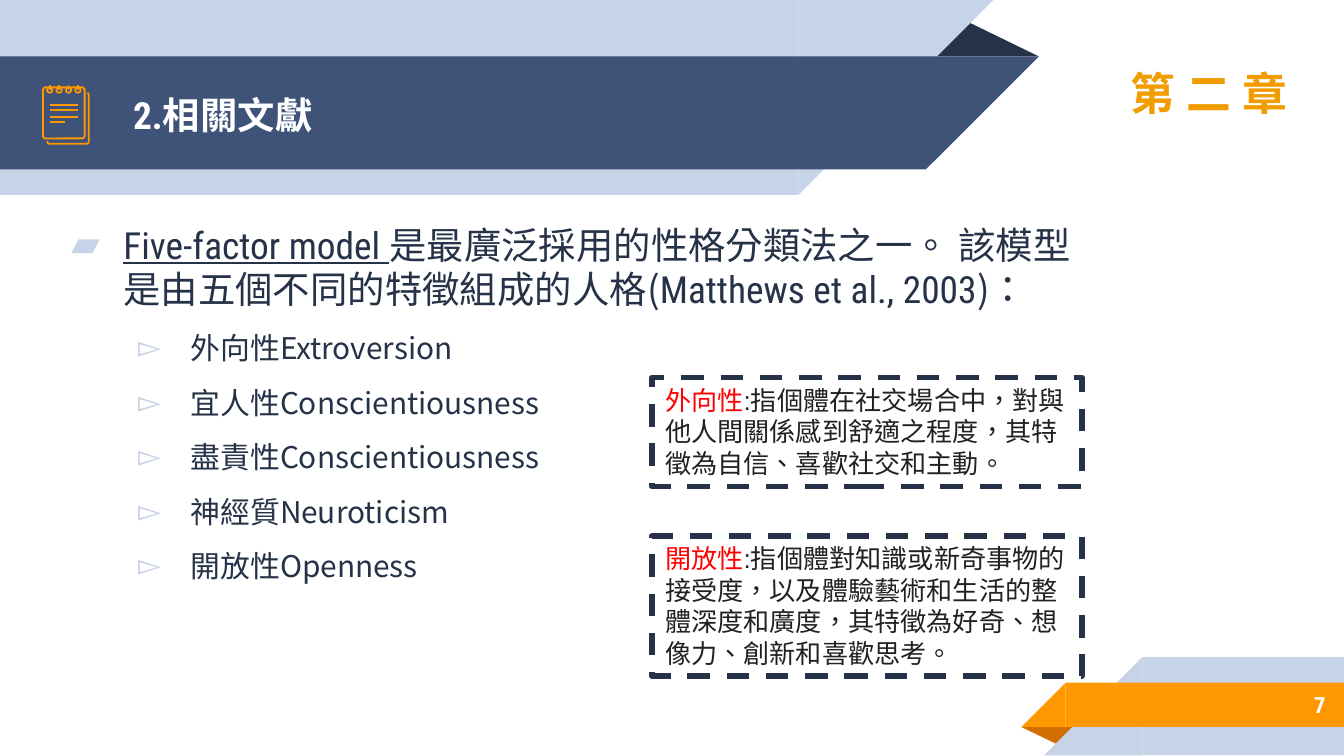
from lxml.etree import SubElement as Sub
from pptx import Presentation
from pptx.dml.color import RGBColor as RGB
from pptx.enum.dml import MSO_LINE as Dash
from pptx.enum.lang import MSO_LANGUAGE_ID as Lang
from pptx.enum.shapes import MSO_CONNECTOR as Link, MSO_SHAPE as Kind
from pptx.enum.text import MSO_ANCHOR as Anchor, PP_ALIGN as Align
from pptx.oxml.ns import qn
from pptx.util import Inches, Pt

HUES = {"navy": "263248", "blue": "3F5378", "pale": "C7D3E6", "gold": "FF9800",
        "rust": "D26F00", "amber": "F19D00", "red": "FF0000", "ink": "202124",
        "white": "FFFFFF"}
ROBO, NOTO, ARIAL = "Roboto Condensed", "Noto Sans CJK SC", "Arial"
TRAITS = ["外向性Extroversion", "宜人性Conscientiousness", "盡責性Conscientiousness",
          "神經質Neuroticism", "開放性Openness"]
NOTES = [
    (2.81, 0.81, "外向性", ":指個體在社交場合中，對與他人間關係感到舒適之程度，"
     "其特徵為自信、喜歡社交和主動。"),
    (3.99, 1.04, "開放性", ":指個體對知識或新奇事物的接受度，以及體驗藝術和生活的"
     "整體深度和廣度，其特徵為好奇、想像力、創新和喜歡思考。"),
]


def hue(name):
    """Return the named colour."""
    return RGB.from_string(HUES[name])


def box(at):
    """Turn inch figures into lengths."""
    return [Inches(n) for n in at]


def solid(slide, kind, at, name, turn=0, flip=False):
    """Add a filled shape without an outline."""
    shape = slide.shapes.add_shape(kind, *box(at))
    shape.shadow.inherit = False
    shape.fill.solid()
    shape.fill.fore_color.rgb = hue(name)
    shape.line.fill.background()
    shape.rotation = turn
    if flip:
        shape.element.spPr.find(qn("a:xfrm")).set("flipH", "1")
    return shape


def head_band(slide, top, wide, tall, name):
    """Add a header band that slants in at its right end."""
    solid(slide, Kind.RECTANGLE, (0, top, wide, tall), name, 180, True)
    solid(slide, Kind.RIGHT_TRIANGLE, (wide, top, tall, tall), name, 180, True)


def foot_band(slide, left, top, tall, name):
    """Add a footer band that slants out at its left end."""
    side = left + tall
    solid(slide, Kind.RECTANGLE, (side, top, 10 - side, tall), name, 0, True)
    solid(slide, Kind.RIGHT_TRIANGLE, (left, top, tall, tall), name, 0, True)


def fold(slide, at, name, turn=0):
    """Add the dark triangle behind a band."""
    solid(slide, Kind.ISOSCELES_TRIANGLE, at, name, turn).adjustments[0] = 0.324


def stroke(shape):
    """Give an icon part its thin gold line."""
    shape.line.color.rgb = hue("gold")
    shape.line.width = Pt(0.96)


def hollow(shape):
    """Leave an icon part unfilled."""
    shape.shadow.inherit = False
    shape.fill.background()
    stroke(shape)
    return shape


def ring(slide, kind, at):
    """Add a hollow icon part."""
    return hollow(slide.shapes.add_shape(kind, *box(at)))


def rule(slide, *ends):
    """Add a straight icon line."""
    line = slide.shapes.add_connector(Link.STRAIGHT, *box(ends))
    stroke(line)
    Sub(line.element.spPr, qn("a:effectLst"))


def icon(slide):
    """Draw the notepad."""
    pen = slide.shapes.build_freeform(Inches(0.35), Inches(1.05), 1.0)
    spots = [(0.36, 1.07), (0.37, 1.07), (0.65, 1.07), (0.66, 1.06),
             (0.66, 0.7), (0.65, 0.69)]
    pen.add_line_segments([box(spot) for spot in spots], close=False)
    hollow(pen.convert_to_shape())
    page = ring(slide, Kind.ROUNDED_RECTANGLE, (0.32, 0.65, 0.31, 0.38))
    page.adjustments[0] = 0.06
    for num in range(4):
        mid = 0.37 + 0.07 * num
        ring(slide, Kind.OVAL, (mid - 0.02, 0.65, 0.04, 0.04))
        rule(slide, mid, 0.63, mid, 0.67)
    for y, end in [(0.78, 0.58), (0.82, 0.58), (0.87, 0.58), (0.91, 0.48)]:
        rule(slide, 0.37, y, end, y)


def write(par, text, size, face, name, bold=False, under=False):
    """Add a formatted run to a paragraph."""
    run = par.add_run()
    run.text = text
    font = run.font
    font.size, font.name, font.bold = Pt(size), face, bold
    font.underline = under
    font.color.rgb = hue(name)
    font.language_id = Lang.TAIWAN if hasattr(Lang, "TAIWAN") else Lang.TRADITIONAL_CHINESE
    Sub(font._element, qn("a:ea")).set("typeface", NOTO)
    return run


def frame(shape, pad=0.1, anchor=Anchor.TOP):
    """Set wrap, insets and anchor, and return the text frame."""
    text = shape.text_frame
    text.word_wrap = True
    text.margin_left = text.margin_right = Inches(0.1)
    text.margin_top = text.margin_bottom = Inches(pad)
    text.vertical_anchor = anchor
    return text


def label(slide, at, text, look, pad=0.1, anchor=Anchor.TOP):
    """Add a bold right-aligned text box."""
    par = frame(slide.shapes.add_textbox(*box(at)), pad, anchor).paragraphs[0]
    par.alignment = Align.RIGHT
    return write(par, text, *look, bold=True)


def bullet(par, sign, left):
    """Give a paragraph a pale bullet and a hanging indent."""
    props = par._p.get_or_add_pPr()
    props.set("marL", str(Inches(left)))
    props.set("indent", str(Inches(-0.39)))
    tint = Sub(props, qn("a:buClr"))
    Sub(tint, qn("a:srgbClr")).set("val", HUES["pale"])
    Sub(props, qn("a:buFont")).set("typeface", ROBO)
    Sub(props, qn("a:buChar")).set("char", sign)


def title(slide):
    """Place the title in front of the header."""
    shape = slide.shapes.title
    shape.left, shape.top, shape.width, shape.height = box((0.89, 0.43, 5.75, 0.84))
    shape.element.getparent().append(shape.element)
    par = frame(shape, anchor=Anchor.MIDDLE).paragraphs[0]
    par.alignment = Align.LEFT
    write(par, "2.相關文獻", 20, ROBO, "white", bold=True)


def body(slide):
    """Add the main statement and its list of traits."""
    text = frame(slide.shapes.add_textbox(*box((0.32, 1.55, 8.01, 3.49))))
    par = text.paragraphs[0]
    bullet(par, "▰", 0.5)
    write(par, "Five-factor model ", 20, ROBO, "navy", under=True)
    for part, face in [
            ("是最廣泛採用的性格分類法之一。 該模型是由五個不同的特徵組成的人格(", NOTO),
            ("Matthews et al., 2003", ROBO), (")：", NOTO)]:
        write(par, part, 20, face, "navy")
    for trait in TRAITS:
        par = text.add_paragraph()
        par.level = 1
        par.space_before = Pt(10)
        bullet(par, "▻", 1)
        write(par, trait, 16, NOTO, "navy")


def note(slide, top, tall, term, text):
    """Add a dashed box that explains one trait."""
    shape = slide.shapes.add_shape(Kind.RECTANGLE, *box((4.85, top, 3.2, tall)))
    shape.shadow.inherit = False
    shape.fill.background()
    shape.line.color.rgb = hue("navy")
    shape.line.width = Pt(3)
    shape.line.dash_style = Dash.DASH
    par = frame(shape, 0.05).paragraphs[0]
    par.alignment = Align.LEFT
    write(par, term, 14, ARIAL, "red")
    write(par, text, 14, ARIAL, "ink")


def main():
    """Build the slide and save it."""
    deck = Presentation()
    deck.slide_width, deck.slide_height = Inches(10), Inches(10 * 9 / 16)
    slide = deck.slides.add_slide(deck.slide_layouts[5])
    fold(slide, (6.88, 0.14, 0.85, 0.28), "navy")
    head_band(slide, 0, 5.94, 1.45, "pale")
    head_band(slide, 0.42, 6.89, 0.84, "blue")
    fold(slide, (7.6, 5.41, 0.43, 0.14), "rust", 180)
    foot_band(slide, 7.77, 4.89, 0.73, "pale")
    foot_band(slide, 7.6, 5.08, 0.33, "gold")
    title(slide)
    icon(slide)
    part = label(slide, (5.58, 0.44, 4.1, 0.5), "第二章", (24, NOTO, "amber"), 0.05)
    part.font._element.set("spc", "600")
    label(slide, (8.33, 5.07, 1.63, 0.35), "7", (12, ROBO, "white"),
          anchor=Anchor.MIDDLE)
    body(slide)
    for item in NOTES:
        note(slide, *item)
    deck.save("out.pptx")


if __name__ == "__main__":
    main()
